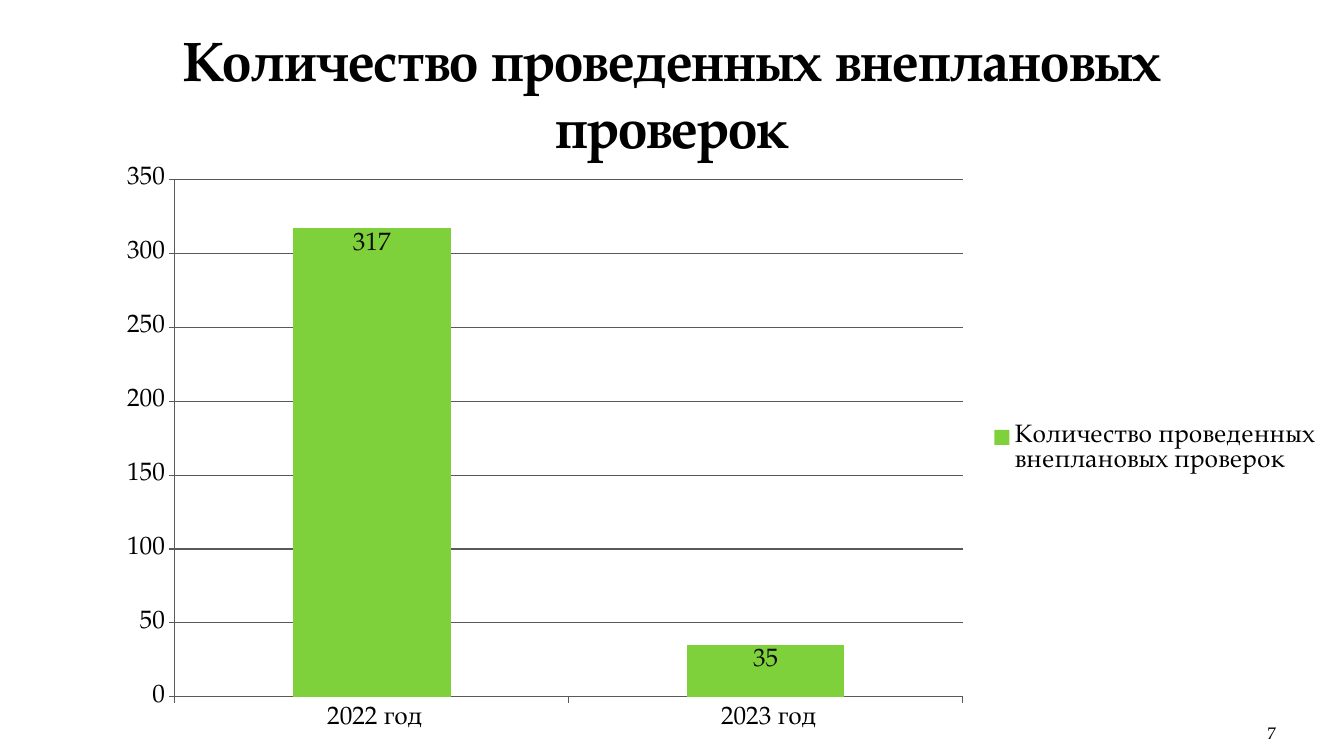
from lxml.etree import SubElement
from pptx import Presentation
from pptx.chart.data import CategoryChartData as Data
from pptx.dml.color import RGBColor
from pptx.enum.chart import XL_CHART_TYPE as Kind
from pptx.enum.chart import XL_LABEL_POSITION as Spot
from pptx.enum.chart import XL_LEGEND_POSITION as Side
from pptx.enum.chart import XL_TICK_MARK as Tick
from pptx.enum.text import MSO_ANCHOR as Anchor
from pptx.enum.text import PP_ALIGN as Align
from pptx.oxml.ns import qn
from pptx.util import Pt

SCALE = 914400 / 100.8  # EMU in one px
FONT = "TeX Gyre Pagella"
BLACK = RGBColor(0x00, 0x00, 0x00)
INK = RGBColor(0x0D, 0x0D, 0x0D)
GREEN = RGBColor(0x7F, 0xD1, 0x3B)
GREY = RGBColor(0x59, 0x59, 0x59)
TITLE = "Количество проведенных внеплановых проверок"
CHECKS = {" 2022 год": 317, " 2023 год": 35}


def px(count):
    return round(count * SCALE)


def place(shape, *box):
    shape.left, shape.top, shape.width, shape.height = map(px, box)


def style(font, size, color=BLACK, bold=False):
    font.name, font.size, font.bold = FONT, Pt(size), bold
    font.color.rgb = color


def write(frame, text, size, align, anchor, bold=False):
    frame.text = text
    frame.word_wrap = True
    frame.vertical_anchor = anchor
    line = frame.paragraphs[0]
    line.alignment = align
    style(line.font, size, bold=bold)


def add_title(slide):
    title = slide.shapes.title
    place(title, 67, 30, 1210, 126)
    write(title.text_frame, TITLE, 39.6, Align.CENTER, Anchor.MIDDLE, True)


def fix_plot(chart, **parts):
    """Pin the inner plot area, in fractions of the chart."""
    area = chart.plots[0]._element.getparent()
    layout = area.find(qn("c:layout"))
    if layout is None:
        layout = SubElement(area, qn("c:layout"))
        area.insert(0, layout)
    manual = SubElement(layout, qn("c:manualLayout"))
    rules = {"layoutTarget": "inner", "xMode": "edge", "yMode": "edge"}
    for tag, value in (rules | parts).items():
        SubElement(manual, qn("c:" + tag)).set("val", str(value))


def style_axis(axis):
    axis.major_tick_mark = Tick.OUTSIDE
    axis.minor_tick_mark = Tick.NONE
    axis.format.line.color.rgb = GREY
    axis.format.line.width = Pt(0.75)


def add_bars(slide):
    data = Data()
    data.categories = list(CHECKS)
    data.add_series(TITLE, list(CHECKS.values()))
    box = map(px, (101, 156, 1231, 588))
    chart = slide.shapes.add_chart(Kind.COLUMN_CLUSTERED, *box, data).chart
    chart.has_title = False
    style(chart.font, 18)
    fix_plot(chart, x=0.06, y=0.04, w=0.64, h=0.88)

    # Axes and grid
    style_axis(chart.category_axis)
    scale = chart.value_axis
    style_axis(scale)
    scale.minimum_scale, scale.maximum_scale, scale.major_unit = 0, 350, 50
    scale.has_major_gridlines = True
    grid = scale.major_gridlines.format.line
    grid.color.rgb, grid.width = GREY, Pt(0.75)

    # Legend
    chart.has_legend = True
    chart.legend.position = Side.RIGHT
    chart.legend.include_in_layout = False

    # Bars and labels
    plot = chart.plots[0]
    plot.gap_width, plot.vary_by_categories = 150, False
    bars = plot.series[0]
    bars.format.fill.solid()
    bars.format.fill.fore_color.rgb = GREEN
    labels = bars.data_labels
    labels.show_value = True
    labels.position = Spot.INSIDE_END
    style(labels.font, 18, INK)


def add_number(slide):
    box = slide.shapes.add_textbox(*map(px, (1164, 708, 112, 40)))
    frame = box.text_frame
    frame.margin_left = frame.margin_right = 0
    write(frame, "7", 12, Align.RIGHT, Anchor.BOTTOM)


def main():
    deck = Presentation()
    deck.slide_width, deck.slide_height = px(1344), px(756)
    slide = deck.slides.add_slide(deck.slide_layouts[5])
    add_title(slide)
    add_bars(slide)
    add_number(slide)
    deck.save("out.pptx")


if __name__ == "__main__":
    main()
